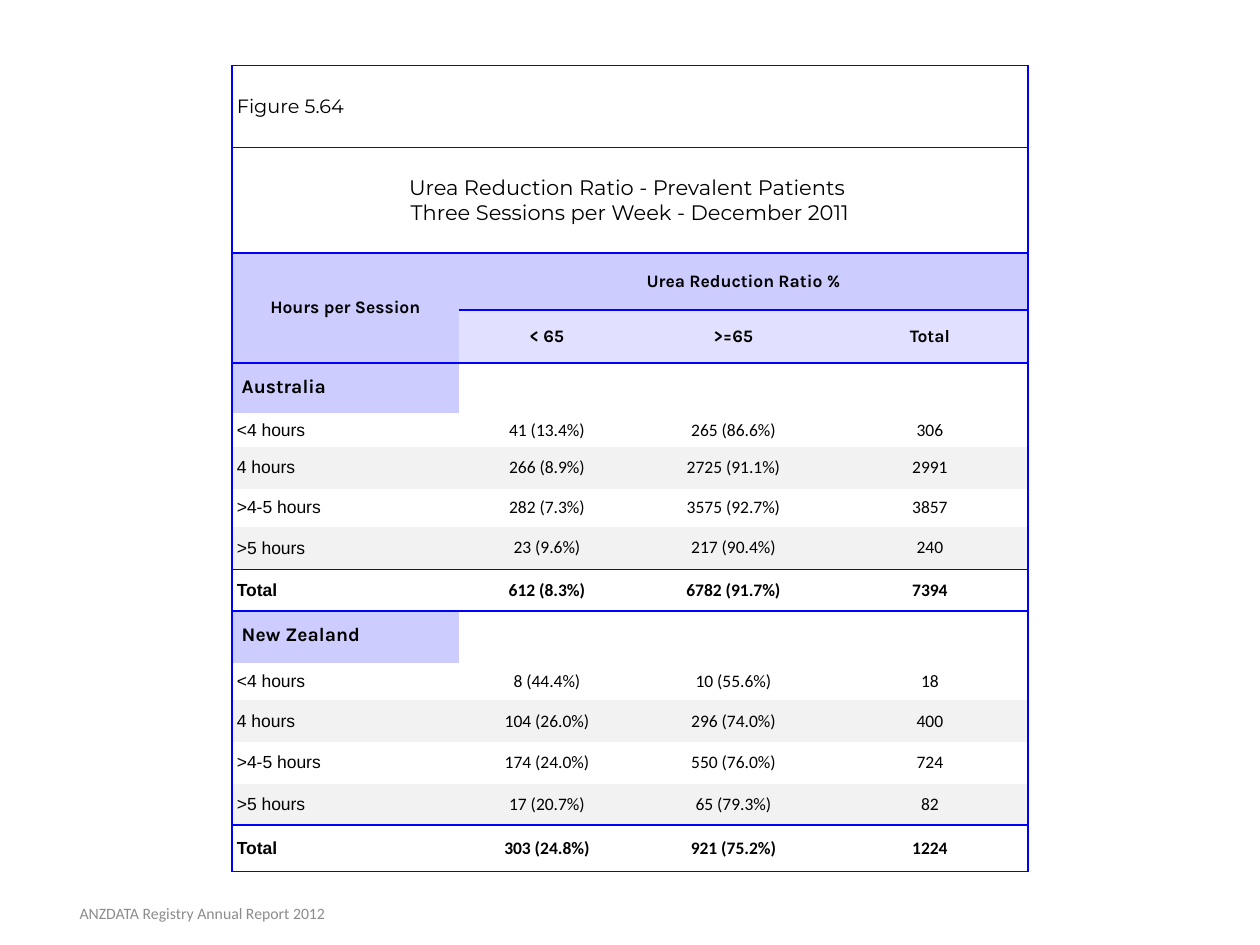
from lxml import etree
from pptx import Presentation, util as u
from pptx.dml.color import RGBColor
from pptx.enum import text
from pptx.oxml import ns

BLACK = RGBColor(0x00, 0x00, 0x00)
BLUE = RGBColor(0x00, 0x00, 0xFF)
LAVENDER = RGBColor(0xCC, 0xCC, 0xFF)
PALE_LAVENDER = RGBColor(0xE1, 0xE1, 0xFF)
BAND = RGBColor(0xF2, 0xF2, 0xF2)
GREY = RGBColor(0x8C, 0x8C, 0x8C)

COLUMNS = [1.8, 1.4, 1.56, 1.56]
ROWS = [0.65, 0.84, 0.45, 0.42, 0.4, 0.27, 0.33, 0.3, 0.34, 0.33,
        0.41, 0.3, 0.33, 0.33, 0.33, 0.37]
RULED_ROWS = {0, 1, 2, 4, 9, 10, 15, 16}
HOURS = ["<4 hours", "4 hours", ">4-5 hours", ">5 hours", "Total"]
COUNTRIES = {
    " Australia": [
        ("41 (13.4%)", "265 (86.6%)", "306"),
        ("266 (8.9%)", "2725 (91.1%)", "2991"),
        ("282 (7.3%)", "3575 (92.7%)", "3857"),
        ("23 (9.6%)", "217 (90.4%)", "240"),
        ("612 (8.3%)", "6782 (91.7%)", "7394"),
    ],
    " New Zealand": [
        ("8 (44.4%)", "10 (55.6%)", "18"),
        ("104 (26.0%)", "296 (74.0%)", "400"),
        ("174 (24.0%)", "550 (76.0%)", "724"),
        ("17 (20.7%)", "65 (79.3%)", "82"),
        ("303 (24.8%)", "921 (75.2%)", "1224"),
    ],
}


def add_span(para, words, font, size, bold=False, color=BLACK):
    """Add one formatted run to a paragraph."""
    span = para.add_run()
    span.text = words
    span.font.name = font
    span.font.size = u.Pt(size)
    span.font.bold = bold
    span.font.color.rgb = color


def write_cell(cell, lines, font, size, bold=False, centred=True, after=None, spacing=None):
    """Write lines of text into a cell, one paragraph each."""
    for index, words in enumerate(lines):
        para = cell.text_frame.paragraphs[0] if index == 0 else cell.text_frame.add_paragraph()
        para.alignment = text.PP_ALIGN.CENTER if centred else text.PP_ALIGN.LEFT
        if after:
            para.space_after = u.Pt(after)
        if spacing:
            para.line_spacing = spacing
        add_span(para, words, font, size, bold)


def set_border(cell, side, visible):
    """Draw or clear one side of a cell."""
    line = etree.SubElement(cell._tc.get_or_add_tcPr(), ns.qn("a:ln" + side), w=str(u.Pt(1)))
    if visible:
        fill = etree.SubElement(line, ns.qn("a:solidFill"))
        etree.SubElement(fill, ns.qn("a:srgbClr"), val=str(BLUE))
    else:
        etree.SubElement(line, ns.qn("a:noFill"))


def is_ruled(row, column):
    """Tell whether a rule runs above this row in this column."""
    return row in RULED_ROWS or (row == 3 and column > 0)


def cell_fill(row, column):
    """Give the background of a cell, or None."""
    if row == 2 or (column == 0 and row in (3, 4, 10)):
        return LAVENDER
    if row == 3:
        return PALE_LAVENDER
    return BAND if row in (6, 8, 12, 14) else None


def style_cell(cell, row, column):
    """Set the insets, borders and fill of a cell."""
    cell.vertical_anchor = text.MSO_ANCHOR.MIDDLE
    cell.margin_left = cell.margin_right = u.Inches(0.04)
    cell.margin_top = cell.margin_bottom = u.Inches(0.04 if row < 2 else 0.02)
    below = row + (cell.span_height if cell.is_merge_origin else 1)
    beyond = column + (cell.span_width if cell.is_merge_origin else 1)
    set_border(cell, "L", column == 0)
    set_border(cell, "R", beyond == len(COLUMNS))
    set_border(cell, "T", is_ruled(row, column))
    set_border(cell, "B", is_ruled(below, column))
    color = cell_fill(row, column)
    if color is None:
        cell.fill.background()
    else:
        cell.fill.solid()
        cell.fill.fore_color.rgb = color


def add_grid(page):
    """Add the styled table with its merged headings."""
    frame = page.shapes.add_table(
        len(ROWS), len(COLUMNS), u.Inches(1.84), u.Inches(0.52),
        u.Inches(sum(COLUMNS)), u.Inches(sum(ROWS)))
    table = frame.table
    table.first_row = table.horz_banding = False
    for column, width in zip(table.columns, COLUMNS):
        column.width = u.Inches(width)
    for row, height in zip(table.rows, ROWS):
        row.height = u.Inches(height)
    for start, end in [((0, 0), (0, 3)), ((1, 0), (1, 3)), ((2, 0), (3, 0)), ((2, 1), (2, 3))]:
        table.cell(*start).merge(table.cell(*end))
    for row in range(len(ROWS)):
        for column in range(len(COLUMNS)):
            style_cell(table.cell(row, column), row, column)
    return table


def write_headings(table):
    """Write the caption, the title and the column headings."""
    write_cell(table.cell(0, 0), ["Figure 5.64"], "Montserrat", 11, centred=False)
    title = ["Urea Reduction Ratio - Prevalent Patients ", "Three Sessions per Week - December 2011"]
    write_cell(table.cell(1, 0), title, "Montserrat", 12)
    headings = {(2, 0): "Hours per Session", (2, 1): "Urea Reduction Ratio %",
                (3, 1): "< 65", (3, 2): ">=65", (3, 3): "Total"}
    for place, words in headings.items():
        write_cell(table.cell(*place), [words], "Karla", 10, bold=True)


def write_country(table, top, country, counts):
    """Write one country's heading and its rows of counts."""
    write_cell(table.cell(top, 0), [country], "Karla", 11, bold=True, centred=False, spacing=0.75)
    for row, (hours, values) in enumerate(zip(HOURS, counts), top + 1):
        bold = hours == "Total"
        write_cell(table.cell(row, 0), [hours], "Arial", 10, bold, centred=False, after=14)
        for column, value in enumerate(values, 1):
            write_cell(table.cell(row, column), [value], "Calibri", 10, bold, after=14)


def add_footer(page):
    """Add the report name at the foot of the page."""
    box = page.shapes.add_textbox(u.Inches(0.02), u.Inches(7.05), u.Inches(3.17), u.Inches(0.4))
    box.text_frame.word_wrap = True
    box.text_frame.vertical_anchor = text.MSO_ANCHOR.MIDDLE
    para = box.text_frame.paragraphs[0]
    para.alignment = text.PP_ALIGN.CENTER
    add_span(para, "ANZDATA Registry Annual Report 2012", "Calibri", 9, color=GREY)


def main():
    """Build the slide and save it."""
    deck = Presentation()
    deck.slide_width, deck.slide_height = u.Inches(10), u.Inches(7.5)
    page = deck.slides.add_slide(deck.slide_layouts[6])
    table = add_grid(page)
    write_headings(table)
    for index, (country, counts) in enumerate(COUNTRIES.items()):
        write_country(table, 4 + index * (len(HOURS) + 1), country, counts)
    add_footer(page)
    deck.save("out.pptx")


if __name__ == "__main__":
    main()
